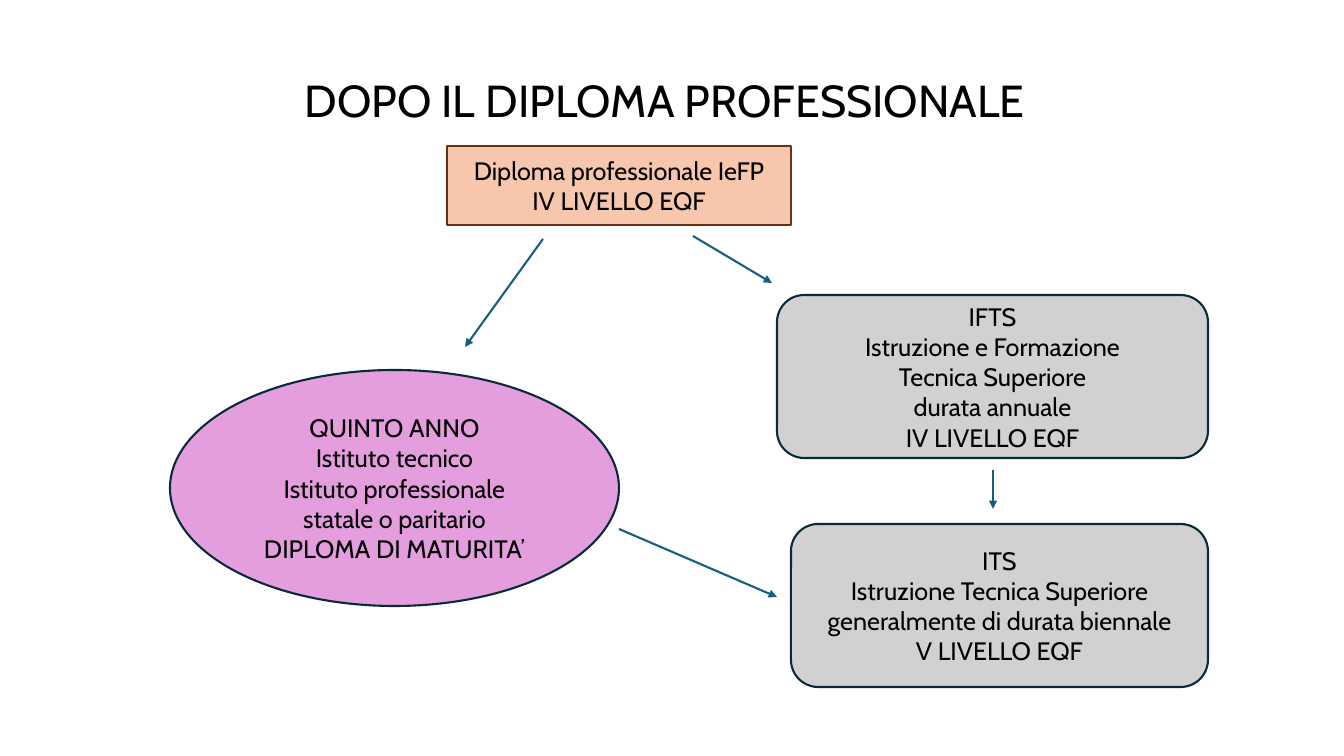
import pptx
import pptx.util
import pptx.dml.color
import pptx.enum.shapes
import pptx.enum.text
import pptx.oxml
import pptx.oxml.ns

Kind = pptx.enum.shapes.MSO_SHAPE
Anchor = pptx.enum.text.MSO_ANCHOR
PX = 914400 / 100.8
FONT = "Cabin"
COLORS = {
    "text": "000000",
    "peach": "F6C6AD",
    "brown": "663216",
    "pink": "E59EDD",
    "gray": "D1D1D1",
    "navy": "092A39",
    "arrow": "156082",
}

TITLE = ("DOPO IL DIPLOMA PROFESSIONALE", (161, 52, 1008, 80))
NODES = [
    (Kind.RECTANGLE, (447, 146, 344, 79), "peach", "brown",
     ["Diploma professionale IeFP", "IV LIVELLO EQF"]),
    (Kind.OVAL, (170, 370, 449, 236), "pink", "navy",
     ["QUINTO ANNO", "Istituto tecnico", "Istituto professionale",
      "statale o paritario", "DIPLOMA DI MATURITA’"]),
    (Kind.ROUNDED_RECTANGLE, (777, 295, 431, 163), "gray", "navy",
     ["IFTS", "Istruzione e Formazione", "Tecnica Superiore",
      "durata annuale", "IV LIVELLO EQF"]),
    (Kind.ROUNDED_RECTANGLE, (791, 524, 417, 163), "gray", "navy",
     ["ITS", "Istruzione Tecnica Superiore",
      "generalmente di durata biennale", "V LIVELLO EQF"]),
]
ARROWS = [
    (693, 236, 772, 283),
    (993, 470, 993, 509),
    (543, 239, 465, 347),
    (619, 529, 777, 597),
]


def emu(*nums):
    return [pptx.util.Emu(round(n * PX)) for n in nums]


def color(name):
    return pptx.dml.color.RGBColor.from_string(COLORS[name])


def write(shape, lines, size, anchor, space=1.0):
    frame = shape.text_frame
    frame.word_wrap = True
    frame.vertical_anchor = anchor
    frame.text = "\n".join(lines)
    for para in frame.paragraphs:
        para.alignment = pptx.enum.text.PP_ALIGN.CENTER
        para.line_spacing = space
        for run in para.runs:
            run.font.name = FONT
            run.font.size = pptx.util.Pt(size)
            run.font.color.rgb = color("text")


def stroke(line, name):
    line.color.rgb = color(name)
    line.width = pptx.util.Pt(1.5)


def add_node(slide, kind, box, fill, edge, lines):
    shape = slide.shapes.add_shape(kind, *emu(*box))
    shape.shadow.inherit = False
    shape.fill.solid()
    shape.fill.fore_color.rgb = color(fill)
    stroke(shape.line, edge)
    write(shape, lines, 18, Anchor.MIDDLE)


def add_arrow(slide, ends):
    kind = pptx.enum.shapes.MSO_CONNECTOR.STRAIGHT
    link = slide.shapes.add_connector(kind, *emu(*ends))
    stroke(link.line, "arrow")
    tail = pptx.oxml.parse_xml(
        f'<a:tailEnd {pptx.oxml.ns.nsdecls("a")} type="triangle"/>')
    link.line._get_or_add_ln().append(tail)
    link._element.spPr.append(pptx.oxml.parse_xml(
        f'<a:effectLst {pptx.oxml.ns.nsdecls("a")}/>'))


def main():
    deck = pptx.Presentation()
    deck.slide_width, deck.slide_height = emu(1344, 756)
    slide = deck.slides.add_slide(deck.slide_layouts[6])
    title, box = TITLE
    write(slide.shapes.add_textbox(*emu(*box)), [title], 32,
          Anchor.BOTTOM, 0.9)
    for node in NODES:
        add_node(slide, *node)
    for ends in ARROWS:
        add_arrow(slide, ends)
    deck.save("out.pptx")


if __name__ == "__main__":
    main()
